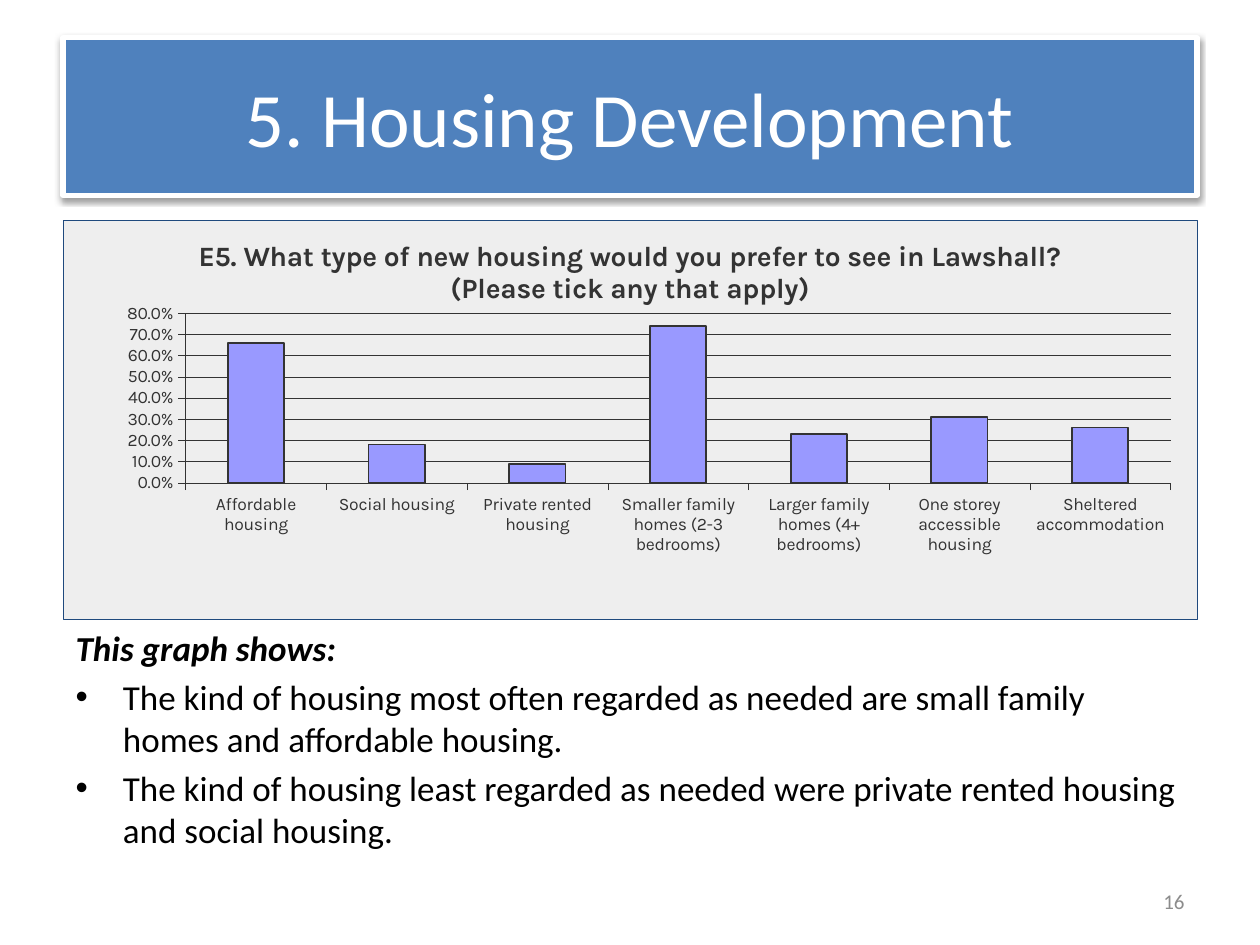
from lxml.etree import SubElement as Sub
from pptx import Presentation
from pptx.chart.data import CategoryChartData as ChartData
from pptx.dml.color import RGBColor as RGB
from pptx.enum.chart import XL_CHART_TYPE as Kind, XL_TICK_MARK as Tick
from pptx.enum.text import MSO_ANCHOR as Anchor, MSO_AUTO_SIZE as Fit, PP_ALIGN as Align
from pptx.oxml import parse_xml
from pptx.oxml.ns import nsdecls, qn
from pptx.util import Inches, Pt

INK = {"blue": "4F81BD", "white": "FFFFFF", "black": "000000", "grey": "8C8C8C",
       "dark": "333333", "pale": "EEEEEE", "bar": "9999FF", "navy": "1F497D"}
WIDE, HIGH = 10, 7.5
EDGE = 0.05 * WIDE
SPAN = WIDE - 2 * EDGE

HOMES = {
    "Affordable housing": 0.66,
    "Social housing": 0.18,
    "Private rented housing": 0.09,
    "Smaller family homes (2-3 bedrooms)": 0.74,
    "Larger family homes (4+ bedrooms)": 0.23,
    "One storey accessible housing": 0.31,
    "Sheltered accommodation": 0.26,
}
ASK = ["E5. What type of new housing would you prefer to see in Lawshall?",
       "(Please tick any that apply)"]
NOTES = ["The kind of housing most often regarded as needed are small family "
         "homes and affordable housing.",
         "The kind of housing least regarded as needed were private rented "
         "housing and social housing."]


def paint(part, color):
    part.solid()
    part.fore_color.rgb = RGB.from_string(INK[color])


def rule(line, color, width):
    paint(line.fill, color)
    line.width = Pt(width)


def style(font, size, color, face="Calibri", bold=False, italic=False):
    font.size, font.name, font.bold, font.italic = Pt(size), face, bold, italic
    font.color.rgb = RGB.from_string(INK[color])


def write(para, text, size=20, color="black", align=None, **look):
    para.alignment = align
    run = para.add_run()
    run.text = text
    style(run.font, size, color, **look)


def place(shape, box):
    shape.left, shape.top, shape.width, shape.height = map(Inches, box)


def add_head(slide, box):
    head = slide.shapes.title
    place(head, box)
    paint(head.fill, "blue")
    rule(head.line, "white", 3)
    head._element.spPr.append(parse_xml(
        f'<a:effectLst {nsdecls("a")}><a:outerShdw blurRad="40000" dist="20000" '
        'dir="5400000" rotWithShape="0"><a:srgbClr val="000000">'
        '<a:alpha val="38000"/></a:srgbClr></a:outerShdw></a:effectLst>'))
    write(head.text_frame.paragraphs[0], "5. Housing Development",
          size=44, color="white", align=Align.CENTER)


def fill_area(parent, before):
    """Give a chart area or plot area its XML format, ahead of the named tags."""
    props = parse_xml(f'<c:spPr {nsdecls("c", "a")}><a:solidFill><a:srgbClr '
                      f'val="{INK["pale"]}"/></a:solidFill></c:spPr>')
    later = [kid for kid in parent if kid.tag in map(qn, before)]
    if later:
        later[0].addprevious(props)
    else:
        parent.append(props)
    return props


def set_plot(area, shares):
    for old in area.findall(qn("c:layout")):
        area.remove(old)
    frame = parse_xml(f'<c:layout {nsdecls("c")}><c:manualLayout/></c:layout>')
    area.insert(0, frame)
    marks = {"layoutTarget": "inner", "xMode": "edge", "yMode": "edge",
             **dict(zip("xywh", shares))}
    for name, val in marks.items():
        Sub(frame[0], qn(f"c:{name}")).set("val", str(val))


def add_graph(slide, box):
    data = ChartData(number_format="0.0%")
    data.categories = list(HOMES)
    data.add_series("Series 1", HOMES.values())
    chart = slide.shapes.add_chart(Kind.COLUMN_CLUSTERED, *map(Inches, box), data).chart
    chart.has_legend = False
    style(chart.font, 10, "dark", face="Karla")

    frame = chart.chart_title.text_frame
    for i, text in enumerate(ASK):
        para = frame.add_paragraph() if i else frame.paragraphs[0]
        write(para, text, size=16, color="dark", face="Karla", bold=True)
    chart.chart_title.include_in_layout = False

    for axis in (chart.category_axis, chart.value_axis):
        axis.major_tick_mark, axis.minor_tick_mark = Tick.OUTSIDE, Tick.NONE
        style(axis.tick_labels.font, 10, "dark", face="Karla")
        rule(axis.format.line, "dark", 0.25)
    axis.minimum_scale, axis.maximum_scale, axis.major_unit = 0, 0.8, 0.1
    axis.tick_labels.number_format = "0.0%"
    axis.tick_labels.number_format_is_linked = False
    rule(axis.major_gridlines.format.line, "dark", 0.25)

    plot = chart.plots[0]
    plot.gap_width, plot.vary_by_categories = 150, False
    bars = plot.series[0].format
    paint(bars.fill, "bar")
    rule(bars.line, "dark", 1)

    root = chart._chartSpace
    area = root.find(qn("c:chart")).find(qn("c:plotArea"))
    set_plot(area, (0.108, 0.232, 0.869, 0.425))
    fill_area(area, [])
    props = fill_area(root, ["c:txPr", "c:externalData"])
    props.append(parse_xml(
        f'<a:ln {nsdecls("a")} w="{Pt(0.25)}"><a:solidFill><a:srgbClr '
        f'val="{INK["navy"]}"/></a:solidFill></a:ln>'))


def add_notes(slide, box):
    body = slide.placeholders[1]
    place(body, box)
    frame = body.text_frame
    frame.auto_size = Fit.NONE
    lead = frame.paragraphs[0]
    write(lead, "This graph shows:", bold=True, italic=True)
    props = lead._p.get_or_add_pPr()
    props.set("marL", "0")
    props.set("indent", "0")
    Sub(props, qn("a:buNone"))
    for text in NOTES:
        write(frame.add_paragraph(), text)


def add_page(slide, box):
    frame = slide.shapes.add_textbox(*map(Inches, box)).text_frame
    frame.word_wrap = True
    frame.vertical_anchor = Anchor.MIDDLE
    write(frame.paragraphs[0], "16", size=12, color="grey", align=Align.RIGHT)


def main():
    deck = Presentation()
    deck.slide_width, deck.slide_height = Inches(WIDE), Inches(HIGH)
    slide = deck.slides.add_slide(deck.slide_layouts[1])
    add_head(slide, (EDGE, 0.04 * HIGH, SPAN, HIGH / 6))
    add_notes(slide, (EDGE, 4.92, SPAN, 2.2))
    add_graph(slide, (EDGE, 1.75, SPAN, 3.17))
    add_page(slide, (WIDE - EDGE - 2.33, 6.95, 2.33, 0.4))
    deck.save("out.pptx")


if __name__ == "__main__":
    main()
